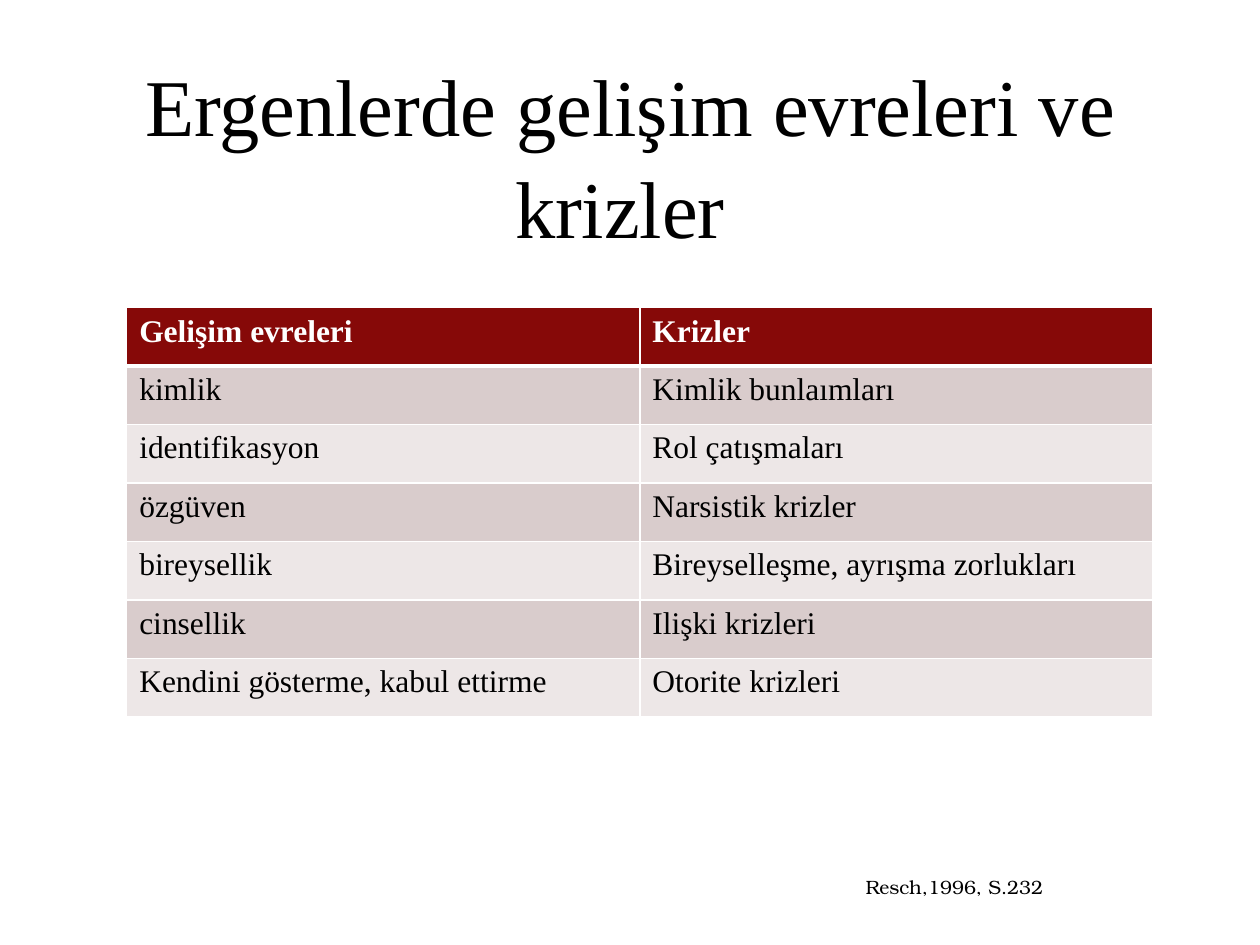
from lxml.etree import SubElement
from pptx import Presentation
from pptx.dml.color import RGBColor
from pptx.enum.text import MSO_ANCHOR, PP_ALIGN
from pptx.oxml.ns import qn
from pptx.util import Pt

BLACK = RGBColor(0x00, 0x00, 0x00)
WHITE = RGBColor(0xFF, 0xFF, 0xFF)
DARK_RED = RGBColor(0x86, 0x09, 0x08)
BANDS = (RGBColor(0xED, 0xE7, 0xE7), RGBColor(0xD9, 0xCC, 0xCC))

SERIF = "Times New Roman"
BOOK_SERIF = "TeX Gyre Bonum"

STAGES_AND_CRISES = [
    ("Gelişim evreleri", "Krizler"),
    ("kimlik", "Kimlik bunlaımları"),
    ("identifikasyon", "Rol çatışmaları"),
    ("özgüven", "Narsistik krizler"),
    ("bireysellik", "Bireyselleşme, ayrışma zorlukları"),
    ("cinsellik", "Ilişki krizleri"),
    ("Kendini gösterme, kabul ettirme", "Otorite krizleri"),
]


def add_span(para, text, size, color=BLACK, font=SERIF, bold=False):
    span = para.add_run()
    span.text = text
    span.font.name = font
    span.font.size = Pt(size)
    span.font.bold = bold
    span.font.color.rgb = color


def set_border(cell, side, width):
    line = SubElement(cell._tc.get_or_add_tcPr(), qn(f"a:ln{side}"), w=str(Pt(width)))
    fill = SubElement(line, qn("a:solidFill"))
    SubElement(fill, qn("a:srgbClr"), val=str(WHITE))


def place_title(page, left, top, width, height):
    title = page.shapes.title
    title.left, title.top, title.width, title.height = map(Pt, (left, top, width, height))
    frame = title.text_frame
    frame.word_wrap = True
    frame.vertical_anchor = MSO_ANCHOR.MIDDLE
    para = frame.paragraphs[0]
    para.alignment = PP_ALIGN.CENTER
    para.line_spacing = 1.06
    add_span(para, "Ergenlerde gelişim evreleri ve krizler ", 46)


def place_table(page, left, top, width, height):
    row_count, column_count = len(STAGES_AND_CRISES), len(STAGES_AND_CRISES[0])
    table = page.shapes.add_table(
        row_count, column_count, Pt(left), Pt(top), Pt(width), Pt(height)
    ).table
    for column in table.columns:
        column.width = Pt(width / column_count)
    for index, texts in enumerate(STAGES_AND_CRISES):
        table.rows[index].height = Pt(height / row_count)
        is_header = index == 0
        for cell, text in zip(table.rows[index].cells, texts):
            # Borders come before the fill; a thick rule parts header and body
            for side in "LRTB":
                is_header_rule = (index, side) in ((0, "B"), (1, "T"))
                set_border(cell, side, 3 if is_header_rule else 1)
            cell.fill.solid()
            cell.fill.fore_color.rgb = DARK_RED if is_header else BANDS[index % 2]
            add_span(cell.text_frame.paragraphs[0], text, 18,
                     color=WHITE if is_header else BLACK, bold=is_header)


def place_citation(page, left, top, width, height):
    box = page.shapes.add_textbox(Pt(left), Pt(top), Pt(width), Pt(height))
    frame = box.text_frame
    frame.word_wrap = True
    frame.vertical_anchor = MSO_ANCHOR.MIDDLE
    para = frame.paragraphs[0]
    para.alignment = PP_ALIGN.RIGHT
    add_span(para, "Resch,1996, S.232", 11, font=BOOK_SERIF)


def main():
    deck = Presentation()
    deck.slide_width, deck.slide_height = Pt(720), Pt(540)
    page = deck.slides.add_slide(deck.slide_layouts.get_by_name("Title Only"))
    page.background.fill.solid()
    page.background.fill.fore_color.rgb = WHITE

    place_title(page, 72, 30, 576, 114)
    place_table(page, 72.4, 175.8, 586.4, 233.8)
    place_citation(page, 310.3, 496.8, 293, 20)
    deck.save("out.pptx")


if __name__ == "__main__":
    main()
